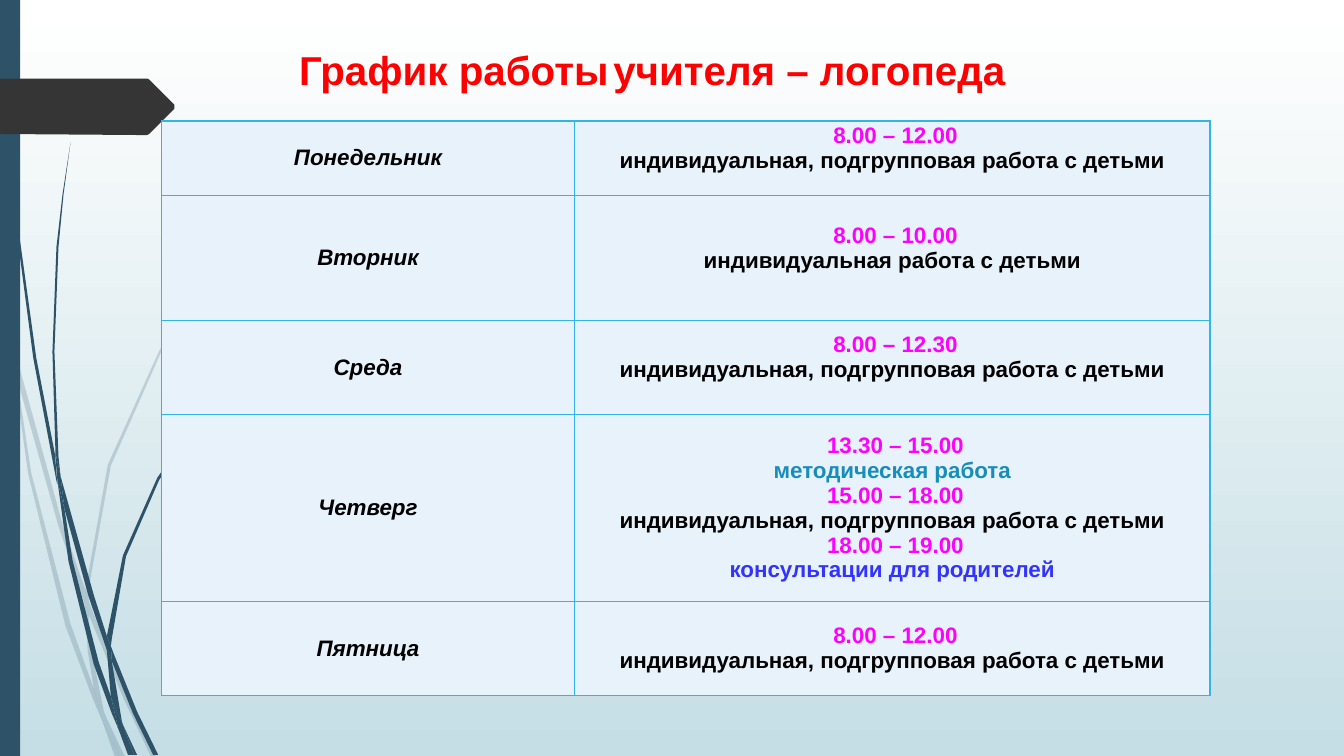
from lxml.etree import SubElement
from pptx import Presentation
from pptx.dml.color import RGBColor
from pptx.enum.shapes import MSO_SHAPE as Shape
from pptx.enum.text import MSO_ANCHOR as Anchor, MSO_AUTO_SIZE as AutoSize, PP_ALIGN as Align
from pptx.oxml.ns import qn
from pptx.util import Pt

EMU_PER_PX = 9144  # 100 px to the inch

WHITE = RGBColor(0xFF, 0xFF, 0xFF)
MIST = RGBColor(0xC5, 0xDE, 0xE5)
NAVY = RGBColor(0x2E, 0x53, 0x69)
CHARCOAL = RGBColor(0x35, 0x35, 0x35)
RED = RGBColor(0xFF, 0x00, 0x00)
BLACK = RGBColor(0x00, 0x00, 0x00)
MAGENTA = RGBColor(0xFF, 0x00, 0xFF)
TEAL = RGBColor(0x17, 0x8D, 0xBB)
BLUE = RGBColor(0x33, 0x33, 0xFF)
CELL_FILL = RGBColor(0xE8, 0xF2, 0xFA)
CELL_BORDER = RGBColor(0x31, 0xB4, 0xE6)

PALE_GRASS = [
    [(11, 350), (9, 322), (0, 282), (0, 299), (10, 344)],
    [(58, 522), (84, 599), (85, 586), (62, 520), (14, 345), (17, 376)],
    [(92, 607), (88, 596), (88, 610), (123, 694), (150, 751), (155, 751), (127, 692)],
    [(119, 751), (124, 751), (105, 711)],
    [(93, 683), (70, 619), (31, 469), (17, 376), (11, 350), (28, 470), (65, 621),
     (92, 693), (101, 714), (99, 707)],
    [(84, 599), (87, 646), (93, 683), (96, 692), (105, 711), (103, 706), (91, 646),
     (88, 610), (88, 608)],
    [(88, 584), (110, 462), (160, 349), (229, 245), (268, 198), (290, 175), (312, 154),
     (312, 153), (289, 175), (268, 197), (228, 244), (158, 348), (107, 461), (85, 584),
     (85, 586), (88, 596)],
    [(101, 714), (114, 751), (119, 751)],
    [(88, 608), (88, 610), (88, 596), (85, 586), (84, 599)],
    [(96, 692), (93, 683), (99, 707), (101, 714), (119, 751), (105, 711)],
]
DARK_GRASS = [
    [(7, 110), (17, 233), (33, 355), (56, 477), (57, 481), (55, 457), (55, 453), (36, 355),
     (19, 232), (8, 109), (5, 48), (3, 0), (3, 48)],
    [(88, 592), (106, 645), (106, 633), (106, 631), (93, 590), (60, 472), (64, 505)],
    [(113, 649), (110, 641), (111, 656), (132, 708), (152, 749), (157, 749), (136, 706)],
    [(110, 691), (98, 657), (72, 556), (64, 505), (57, 477), (68, 557), (93, 659),
     (111, 708), (117, 722), (116, 717)],
    [(60, 472), (58, 453), (54, 349), (58, 245), (63, 193), (70, 141), (62, 193), (56, 245),
     (52, 349), (55, 449)],
    [(133, 749), (136, 749), (122, 719)],
    [(57, 477), (64, 505), (60, 472), (55, 449), (55, 453)],
    [(111, 633), (125, 552), (158, 476), (205, 406), (231, 374), (246, 359), (261, 344),
     (260, 344), (245, 358), (231, 373), (204, 405), (156, 474), (122, 551), (106, 631),
     (110, 641)],
    [(117, 722), (127, 749), (131, 749)],
    [(106, 645), (110, 691), (116, 706), (122, 719), (121, 716), (111, 656), (109, 651)],
    [(106, 645), (109, 651), (111, 656), (110, 641), (106, 631), (106, 633)],
    [(116, 706), (110, 691), (116, 717), (117, 722), (130, 749), (133, 749), (122, 719)],
]
POINTER = [(173, 108), (148, 133), (146, 134), (136, 134), (-1, 133), (0, 78), (146, 78),
           (148, 79), (173, 104)]

GROUP_WORK = ("индивидуальная, подгрупповая работа с детьми", BLACK)
# day, row height, bottom margin of the hours, (text, colour) lines
SCHEDULE = [
    ("Понедельник", 74, 20, [(" 8.00 – 12.00", MAGENTA), GROUP_WORK]),
    ("Вторник", 124, 20, [(" 8.00 – 10.00", MAGENTA),
                          ("индивидуальная работа с детьми", BLACK)]),
    ("Среда", 93, 20, [(" 8.00 – 12.30", MAGENTA), GROUP_WORK]),
    ("Четверг", 186, 0, [(" 13.30 – 15.00", MAGENTA), ("методическая работа", TEAL),
                         (" 15.00 – 18.00", MAGENTA), GROUP_WORK,
                         (" 18.00 – 19.00", MAGENTA),
                         ("консультации для родителей", BLUE)]),
    ("Пятница", 93, 0, [(" 8.00 – 12.00", MAGENTA), GROUP_WORK]),
]


def px(*lengths):
    return [length * EMU_PER_PX for length in lengths]


def add_text(paragraph, text, *, size=16, color=BLACK, bold=True, italic=False):
    paragraph.alignment = Align.CENTER
    run = paragraph.add_run()
    run.text = text
    font = run.font
    font.name, font.size, font.bold, font.italic = "Arial", Pt(size), bold, italic
    font.color.rgb = color


class SlideBuilder:
    def __init__(self, presentation):
        self.slide = presentation.slides.add_slide(presentation.slide_layouts[5])
        self.shapes = self.slide.shapes

    def background(self, top, bottom):
        fill = self.slide.background.fill
        fill.gradient()
        fill.gradient_angle = 270
        for stop, position, color in zip(fill.gradient_stops, (0, 1), (top, bottom)):
            stop.position = position
            stop.color.rgb = color

    def paint(self, shape, color, opacity=100):
        shape.shadow.inherit = False
        shape.fill.solid()
        shape.fill.fore_color.rgb = color
        shape.line.fill.background()
        if opacity < 100:
            color_element = shape.fill._xPr.find(qn("a:solidFill"))[0]
            SubElement(color_element, qn("a:alpha"), val=str(opacity * 1000))

    def rectangle(self, left, top, width, height, color):
        shape = self.shapes.add_shape(Shape.RECTANGLE, *px(left, top, width, height))
        self.paint(shape, color)

    def outline(self, points, color, opacity=100, shapes=None):
        builder = (shapes or self.shapes).build_freeform(*points[0], scale=EMU_PER_PX)
        builder.add_line_segments(points[1:], close=True)
        self.paint(builder.convert_to_shape(), color, opacity)

    def grass(self, blades, color, opacity=100):
        group = self.shapes.add_group_shape()
        for blade in blades:
            self.outline(blade, color, opacity, group.shapes)

    def title(self, left, top, width, height, runs):
        title = self.shapes.title
        title.left, title.top, title.width, title.height = px(left, top, width, height)
        frame = title.text_frame
        frame.auto_size, frame.vertical_anchor = AutoSize.NONE, Anchor.TOP
        frame.margin_top, = px(11)
        for text, style in runs:
            add_text(frame.paragraphs[0], text, color=RED, **style)

    def cell(self, cell, lines, bottom=0, italic=False):
        cell.margin_left, cell.margin_right, cell.margin_top, cell.margin_bottom = px(3, 3, 0, bottom)
        cell.vertical_anchor = Anchor.MIDDLE
        frame = cell.text_frame
        for index, (text, color) in enumerate(lines):
            paragraph = frame.add_paragraph() if index else frame.paragraphs[0]
            add_text(paragraph, text, color=color, italic=italic)
        properties = cell._tc.get_or_add_tcPr()
        for side in ("lnL", "lnR", "lnT", "lnB"):
            border = SubElement(properties, qn(f"a:{side}"), w=str(Pt(1)))
            border_fill = SubElement(border, qn("a:solidFill"))
            SubElement(border_fill, qn("a:srgbClr"), val=str(CELL_BORDER))
        cell.fill.solid()
        cell.fill.fore_color.rgb = CELL_FILL

    def schedule(self, left, top, widths, rows):
        height = sum(row[1] for row in rows)
        frame = self.shapes.add_table(len(rows), len(widths), *px(left, top, sum(widths), height))
        table = frame.table
        table.first_row = table.horz_banding = False
        for column, width in zip(table.columns, px(*widths)):
            column.width = width
        for row, (day, row_height, bottom, lines) in zip(table.rows, rows):
            row.height, = px(row_height)
            self.cell(row.cells[0], [(day, BLACK)], italic=True)
            self.cell(row.cells[1], lines, bottom)


def main():
    presentation = Presentation()
    presentation.slide_width, presentation.slide_height = px(1333, 750)
    builder = SlideBuilder(presentation)
    builder.background(WHITE, MIST)
    builder.grass(PALE_GRASS, NAVY, opacity=20)
    builder.grass(DARK_GRASS, NAVY)
    builder.rectangle(0, 0, 20, 750, NAVY)
    builder.outline(POINTER, CHARCOAL)
    builder.title(233, 34, 828, 87, [
        ("График работы", {"size": 28.8}),
        (" ", {"size": 11.7, "bold": False}),
        ("учителя – логопеда", {"size": 28.8}),
    ])
    builder.schedule(160, 120, (410, 630), SCHEDULE)
    presentation.save("out.pptx")


if __name__ == "__main__":
    main()
